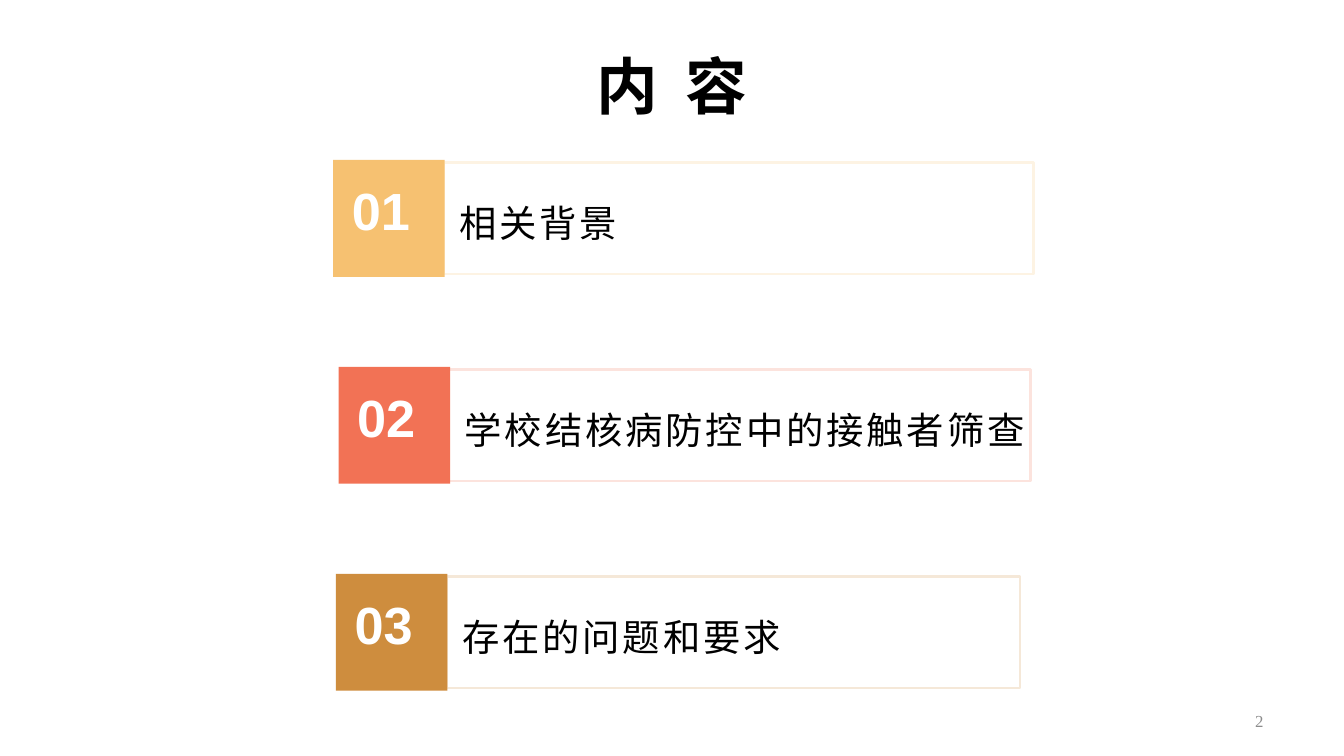
"""Build a contents slide with three numbered agenda entries."""
from dataclasses import dataclass
from typing import Any

import lxml.etree
import pptx
import pptx.dml.color
import pptx.enum.shapes
import pptx.enum.text
import pptx.oxml.ns
import pptx.util

Inches = pptx.util.Inches
Pt = pptx.util.Pt
RGBColor = pptx.dml.color.RGBColor
Align = pptx.enum.text.PP_ALIGN
Anchor = pptx.enum.text.MSO_ANCHOR

BLACK = RGBColor(0x00, 0x00, 0x00)
WHITE = RGBColor(0xFF, 0xFF, 0xFF)
GRAY = RGBColor(0x8C, 0x8C, 0x8C)
YELLOW = RGBColor(0xF6, 0xC1, 0x71)
PALE_YELLOW = RGBColor(0xFD, 0xF3, 0xE3)
CORAL = RGBColor(0xF2, 0x72, 0x55)
PALE_CORAL = RGBColor(0xFC, 0xE3, 0xDD)
BROWN = RGBColor(0xCE, 0x8D, 0x3E)
PALE_BROWN = RGBColor(0xF5, 0xE8, 0xD8)

CJK_FONT = "Noto Sans CJK SC"
TITLE_FORMAT = {"size": Pt(33), "name": CJK_FONT, "bold": True}
CAPTION_FORMAT = {"size": Pt(20), "name": CJK_FONT, "bold": False}
NUMBER_FORMAT = {"size": Pt(28), "name": "Arial", "bold": True}
PAGE_FORMAT = {"size": Pt(9), "name": "Times New Roman", "bold": False}

SLIDE_WIDTH = Inches(10)
SLIDE_HEIGHT = SLIDE_WIDTH * 9 // 16
TILE_WIDTH = 0.83
TILE_HEIGHT = 0.87
FRAME_HEIGHT = 0.83
FRAME_OFFSET = 0.82


@dataclass(frozen=True)
class Entry:
    """One agenda entry, with lengths in inches."""

    caption: str
    left: float
    top: float
    frame_width: float
    color: RGBColor
    pale_color: RGBColor


ENTRIES = [
    Entry("相关背景", 2.48, 1.19, 4.39, YELLOW, PALE_YELLOW),
    Entry("学校结核病防控中的接触者筛查", 2.52, 2.73, 4.33, CORAL, PALE_CORAL),
    Entry("存在的问题和要求", 2.50, 4.27, 4.27, BROWN, PALE_BROWN),
]


def place(shape: Any, left: float, top: float, width: float, height: float) -> None:
    """Move and size a shape in inches."""
    box = {"left": left, "top": top, "width": width, "height": height}
    for name, value in box.items():
        setattr(shape, name, Inches(value))


def write(shape: Any, text: str, font_format: dict[str, Any], color: RGBColor,
          alignment: Any = Align.LEFT, anchor: Any = Anchor.MIDDLE,
          spacing: float = 0, line_spacing: float = 1.0) -> None:
    """Fill a shape with one formatted line of text."""
    frame = shape.text_frame
    frame.word_wrap = True
    frame.auto_size = pptx.enum.text.MSO_AUTO_SIZE.NONE
    frame.vertical_anchor = anchor
    paragraph = frame.paragraphs[0]
    paragraph.alignment = alignment
    paragraph.line_spacing = line_spacing
    run = paragraph.add_run()
    run.text = text
    for name, value in font_format.items():
        setattr(run.font, name, value)
    run.font.color.rgb = color
    properties = run._r.get_or_add_rPr()
    properties.set("spc", str(round(spacing * 100)))
    east_asian = lxml.etree.Element(pptx.oxml.ns.qn("a:ea"), typeface=font_format["name"])
    properties.find(pptx.oxml.ns.qn("a:latin")).addnext(east_asian)


def add_text(slide: Any, left: float, top: float, width: float, height: float,
             text: str, font_format: dict[str, Any], color: RGBColor,
             **options: Any) -> None:
    """Add a text box with one formatted line."""
    box = slide.shapes.add_textbox(*map(Inches, (left, top, width, height)))
    write(box, text, font_format, color, **options)


def add_rectangle(slide: Any, left: float, top: float, width: float, height: float) -> Any:
    """Add a rectangle without a shadow."""
    shape = slide.shapes.add_shape(
        pptx.enum.shapes.MSO_SHAPE.RECTANGLE,
        *map(Inches, (left, top, width, height)),
    )
    shape.shadow.inherit = False
    return shape


def add_entry(slide: Any, number: int, entry: Entry) -> None:
    """Draw the frame, the number tile and the caption of an entry."""
    frame_left = entry.left + FRAME_OFFSET
    frame = add_rectangle(slide, frame_left, entry.top + 0.02, entry.frame_width, FRAME_HEIGHT)
    frame.fill.background()
    frame.line.color.rgb = entry.pale_color
    frame.line.width = Pt(1.5)

    tile = add_rectangle(slide, entry.left, entry.top, TILE_WIDTH, TILE_HEIGHT)
    tile.fill.solid()
    tile.fill.fore_color.rgb = entry.color
    tile.line.fill.background()

    add_text(slide, frame_left + 0.02, entry.top, 4.39, TILE_HEIGHT, entry.caption,
             CAPTION_FORMAT, BLACK, spacing=1.5, line_spacing=1.2)
    add_text(slide, entry.left + 0.04, entry.top + 0.09, TILE_WIDTH, 0.57, f"{number:02}",
             NUMBER_FORMAT, WHITE, anchor=Anchor.TOP)


def main() -> None:
    """Build and save the presentation."""
    presentation = pptx.Presentation()
    presentation.slide_width = SLIDE_WIDTH
    presentation.slide_height = SLIDE_HEIGHT
    slide = presentation.slides.add_slide(presentation.slide_layouts.get_by_name("Title Only"))
    title = slide.shapes.title
    place(title, 0.5, 0.16, 9, 0.94)
    write(title, "内 容", TITLE_FORMAT, BLACK, alignment=Align.CENTER, spacing=3.7)
    add_text(slide, 7.17, 5.21, 2.33, 0.3, "2", PAGE_FORMAT, GRAY, alignment=Align.RIGHT)
    for number, entry in enumerate(ENTRIES, start=1):
        add_entry(slide, number, entry)
    presentation.save("out.pptx")


if __name__ == "__main__":
    main()
